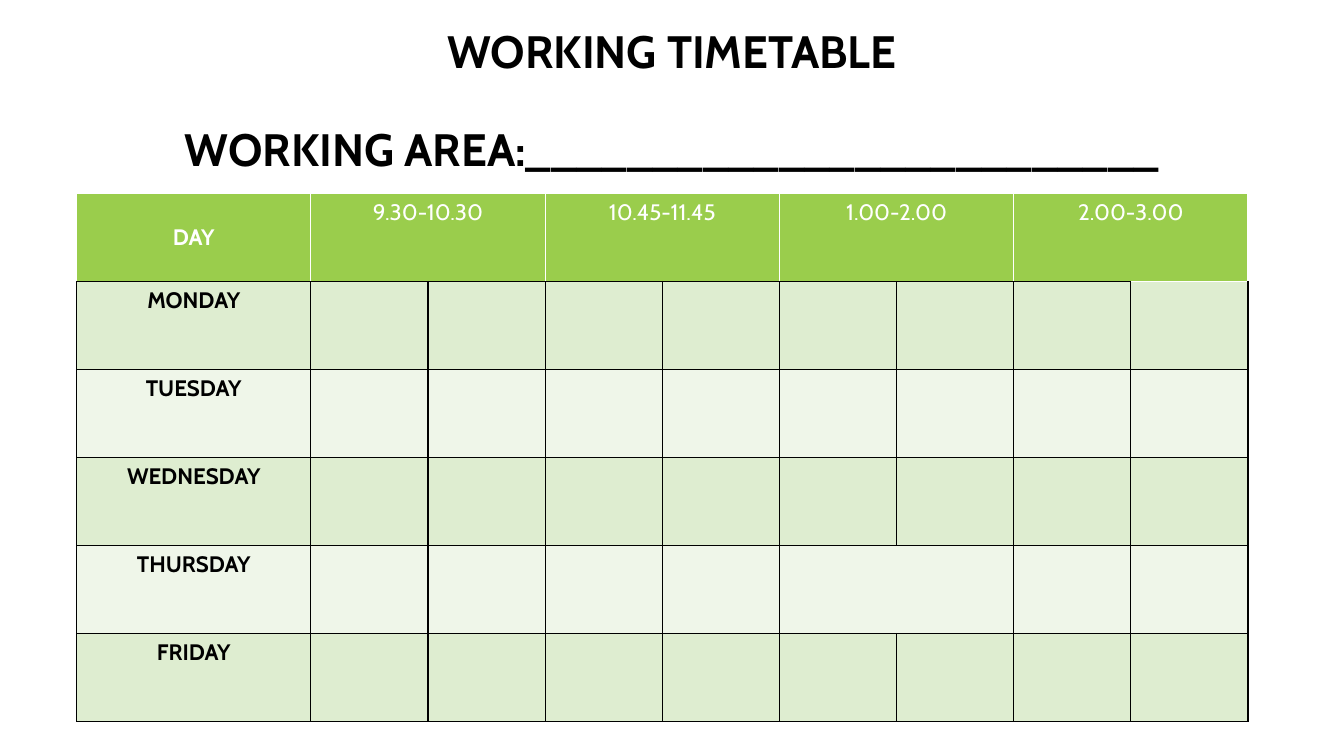
from pptx import Presentation
from pptx.dml.color import RGBColor
from pptx.enum.text import MSO_ANCHOR, PP_ALIGN
from pptx.oxml import parse_xml
from pptx.oxml.ns import nsdecls
from pptx.util import Inches, Pt

HEADINGS = ["WORKING TIMETABLE", "WORKING AREA:" + "_" * 25]
SLOTS = ["9.30-10.30", "10.45-11.45", "1.00-2.00", "2.00-3.00"]
DAYS = ["MONDAY", "TUESDAY", "WEDNESDAY", "THURSDAY", "FRIDAY"]
JOINED_DAY, JOINED_SLOT = "THURSDAY", "1.00-2.00"

FONT = "Cabin"
BLACK, WHITE, GREEN = "000000", "FFFFFF", "9ACD4C"
BANDS = ["DEEDD0", "EFF6E9"]
HALF_SLOT, ROW_HEIGHT = 1.162, 0.873
HALVES = 2 * len(SLOTS)


def color(hex_code):
    return RGBColor.from_string(hex_code)


def write(paragraph, words, size, hex_code, bold):
    paragraph.alignment = PP_ALIGN.CENTER
    run = paragraph.add_run()
    run.text = words
    run.font.name = FONT
    run.font.size = Pt(size)
    run.font.bold = bold
    run.font.color.rgb = color(hex_code)


def style(cell, fill, left, right, top, bottom):
    properties = cell._tc.get_or_add_tcPr()
    for side, hex_code in zip("LRTB", (left, right, top, bottom)):
        properties.append(parse_xml(
            f'<a:ln{side} {nsdecls("a")} w="12700"><a:solidFill>'
            f'<a:srgbClr val="{hex_code}"/></a:solidFill></a:ln{side}>'))
    cell.fill.solid()
    cell.fill.fore_color.rgb = color(fill)


def add_headings(slide):
    box = slide.shapes.add_textbox(Inches(1.25), Inches(0.06), Inches(10.83), Inches(1.44))
    frame = box.text_frame
    frame.word_wrap = True
    frame.vertical_anchor = MSO_ANCHOR.TOP
    frame.margin_top = Inches(0.23)
    for index, heading in enumerate(HEADINGS):
        paragraph = frame.add_paragraph() if index else frame.paragraphs[0]
        paragraph.line_spacing = 0.9
        if index:
            paragraph.space_before = Pt(35)
        write(paragraph, heading, 32.4, BLACK, True)


def add_timetable(slide):
    rows, columns = len(DAYS) + 1, HALVES + 1
    table = slide.shapes.add_table(
        rows, columns, Inches(0.76), Inches(1.92),
        Inches(HALF_SLOT * (HALVES + 2)), Inches(ROW_HEIGHT * rows)).table
    for index, column in enumerate(table.columns):
        column.width = Inches(HALF_SLOT if index else 2 * HALF_SLOT)

    for column in range(columns):
        bottom = WHITE if column == HALVES else BLACK
        style(table.cell(0, column), GREEN, WHITE, WHITE, WHITE, bottom)
        for row in range(1, rows):
            top = WHITE if (row, column) == (1, HALVES) else BLACK
            style(table.cell(row, column), BANDS[(row - 1) % 2], BLACK, BLACK, top, BLACK)

    day_heading = table.cell(0, 0)
    day_heading.vertical_anchor = MSO_ANCHOR.MIDDLE
    write(day_heading.text_frame.paragraphs[0], "DAY", 16, WHITE, True)
    for index, slot in enumerate(SLOTS):
        first = 1 + 2 * index
        table.cell(0, first).merge(table.cell(0, first + 1))
        write(table.cell(0, first).text_frame.paragraphs[0], slot, 16, WHITE, False)
    for row, day in enumerate(DAYS, 1):
        write(table.cell(row, 0).text_frame.paragraphs[0], day, 16, BLACK, True)

    row, first = DAYS.index(JOINED_DAY) + 1, 1 + 2 * SLOTS.index(JOINED_SLOT)
    table.cell(row, first).merge(table.cell(row, first + 1))


def main():
    deck = Presentation()
    deck.slide_width, deck.slide_height = Inches(13.33), Inches(7.5)
    slide = deck.slides.add_slide(deck.slide_layouts[6])
    add_headings(slide)
    add_timetable(slide)
    deck.save("out.pptx")


if __name__ == "__main__":
    main()
